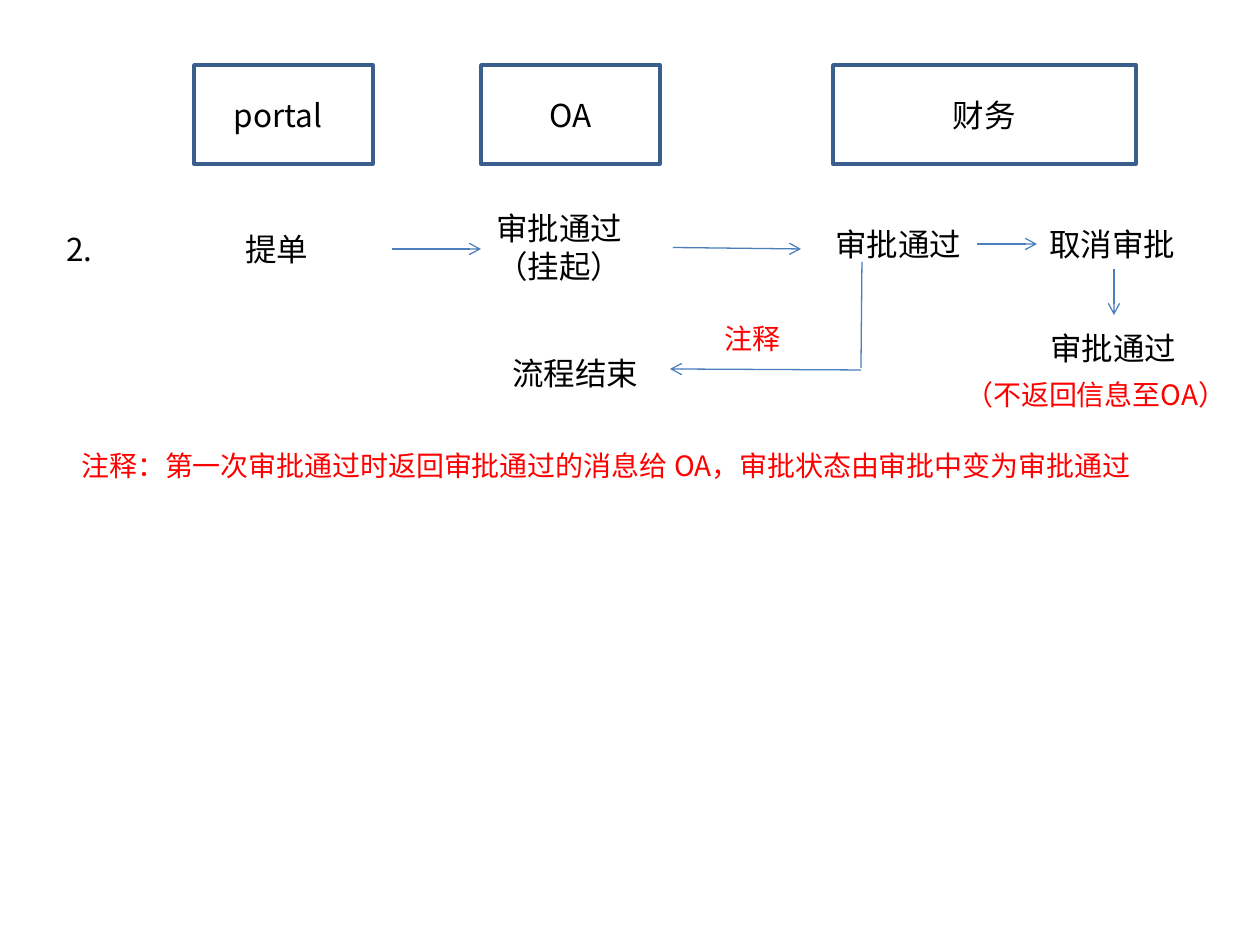
"""Build the approval flow slide across portal, OA and the finance system."""
from lxml import etree
from pptx import Presentation
from pptx import util as u
from pptx.dml.color import RGBColor
from pptx.enum import shapes, text
from pptx.oxml.ns import qn

COLORS = {"black": "000000", "red": "FF0000", "white": "FFFFFF",
          "border": "3A5F8C", "arrow": "4B7EBC"}
FONT = "Noto Sans CJK SC"
HEAD_TOP, HEAD_H = 65, 99
INSET = 13

SYSTEMS = [("portal", 194, 179, 10), ("OA", 481, 179, 0), ("财务", 833, 303, 0)]
STEPS = {
    "number": ("2.", 54, 224, 110, 50),
    "submit": ("提单", 233, 224, 100, 50),
    "suspend": ("审批通过（挂起）", 484, 203, 189, 89),
    "approve": ("审批通过", 823, 219, 154, 50),
    "finish": ("流程结束", 500, 348, 169, 50),
    "cancel": ("取消审批", 1037, 219, 154, 50),
    "reapprove": ("审批通过", 1038, 323, 154, 50),
}
NOTES = {
    "explanation": ("注释：第一次审批通过时返回审批通过的消息给 OA，审批状态由审批中变为审批通过",
                    69, 442, 1181, 47),
    "mark": ("注释", 712, 315, 89, 47),
    "no_reply": ("（不返回信息至OA）", 953, 371, 321, 47),
}
LINES = [
    ((392, 249), (481, 249), True, None, None),
    ((673, 248), (801, 249), True, ("suspend", 3), None),
    ((862, 262), (861, 368), False, None, None),
    ((861, 370), (670, 369), True, None, None),
    ((977, 244), (1037, 244), True, ("approve", 3), ("cancel", 1)),
    ((1114, 269), (1114, 315), True, ("cancel", 2), None),
]


def px(n):
    return u.Emu(round(n * 914400 / 126))


def rgb(name):
    return RGBColor.from_string(COLORS[name])


def write(tf, words, size, color):
    tf.word_wrap = True
    p = tf.paragraphs[0]
    p.text = words
    p.font.size = u.Pt(size)
    p.font.name = FONT
    p.font.color.rgb = rgb(color)
    ea = etree.SubElement(p.font._element, qn("a:ea"))
    ea.set("typeface", FONT)
    return p


def add_system(s, name, left, width, shift):
    sp = s.shapes.add_shape(shapes.MSO_SHAPE.RECTANGLE,
                            *map(px, (left, HEAD_TOP, width, HEAD_H)))
    sp.shadow.inherit = False
    sp.fill.solid()
    sp.fill.fore_color.rgb = rgb("white")
    sp.line.color.rgb = rgb("border")
    sp.line.width = u.Pt(2)
    tf = sp.text_frame
    tf.vertical_anchor = text.MSO_ANCHOR.MIDDLE
    tf.margin_right = px(INSET + shift)
    write(tf, name, 18, "black").alignment = text.PP_ALIGN.CENTER


def add_label(s, words, box, size, color):
    sp = s.shapes.add_textbox(*map(px, box))
    write(sp.text_frame, words, size, color)
    return sp


def add_line(s, labels, start, end, arrow, source, target):
    c = s.shapes.add_connector(shapes.MSO_CONNECTOR.STRAIGHT, *map(px, start + end))
    if source:
        c.begin_connect(labels[source[0]], source[1])
    if target:
        c.end_connect(labels[target[0]], target[1])
    c.line.color.rgb = rgb("arrow")
    c.line.width = u.Pt(0.75)
    if arrow:
        ln = c._element.spPr.find(qn("a:ln"))
        etree.SubElement(ln, qn("a:tailEnd")).set("type", "arrow")
    etree.SubElement(c._element.spPr, qn("a:effectLst"))


def main():
    prs = Presentation()
    prs.slide_width, prs.slide_height = px(1260), px(945)
    s = prs.slides.add_slide(prs.slide_layouts[6])
    for system in SYSTEMS:
        add_system(s, *system)
    labels = {}
    for group, size, color in ((STEPS, 18, "black"), (NOTES, 16, "red")):
        for key, (words, *box) in group.items():
            labels[key] = add_label(s, words, box, size, color)
    for line in LINES:
        add_line(s, labels, *line)
    prs.save("out.pptx")


if __name__ == "__main__":
    main()
